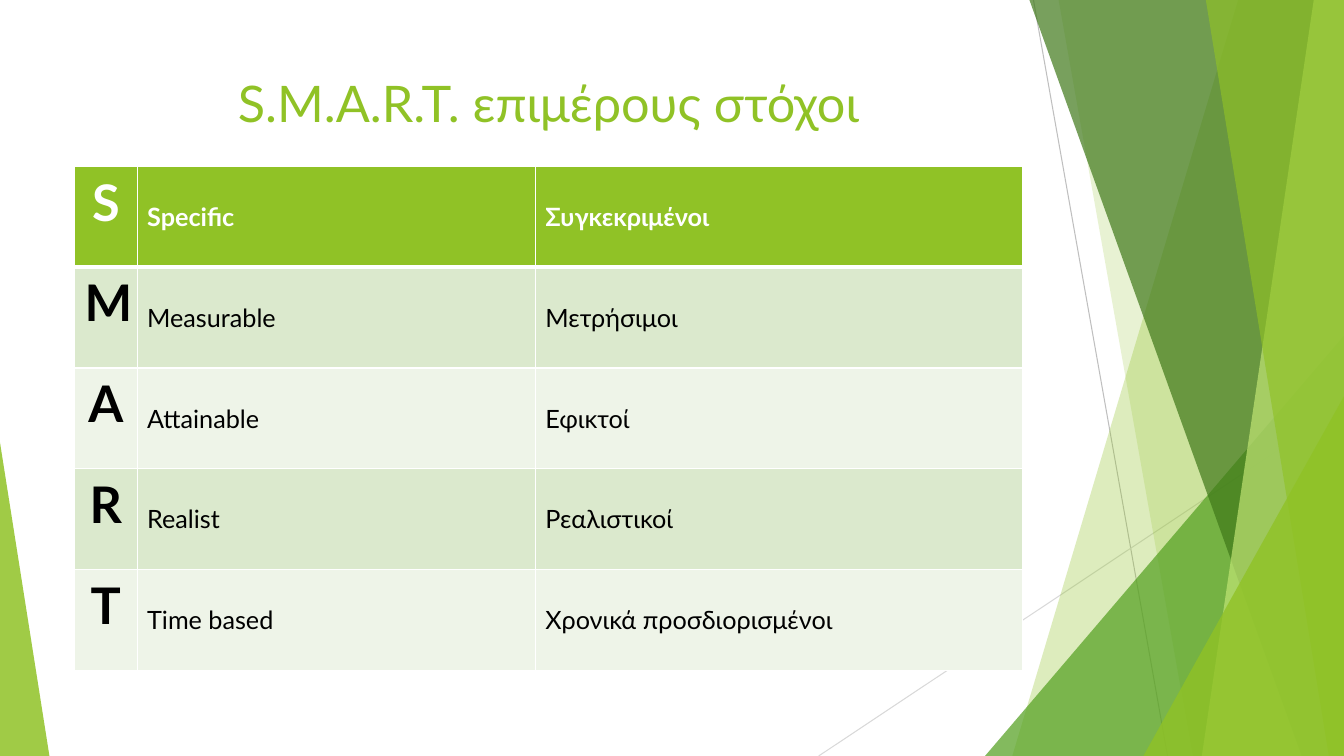
import pptx
import pptx.util
import pptx.dml.color
import pptx.enum.shapes
import pptx.enum.text
import pptx.oxml
import pptx.oxml.ns
from lxml import etree

Inches = pptx.util.Inches
Pt = pptx.util.Pt
ALIGN = pptx.enum.text.PP_ALIGN
ANCHOR = pptx.enum.text.MSO_ANCHOR
FONT = "Lato"
HUES = {
    "lime": "90C226", "leaf": "54A021", "moss": "3F7819", "pale": "C0E474",
    "grey": "BFBFBF", "mist": "D9D9D9", "white": "FFFFFF", "black": "000000",
    "band": "DBE9CD", "light": "EEF4E8",
}
GOALS = [
    ("S", "Specific", "Συγκεκριμένοι"),
    ("M", "Measurable", "Μετρήσιμοι"),
    ("A", "Attainable", "Εφικτοί"),
    ("R", "Realist", "Ρεαλιστικοί"),
    ("T", "Time based", "Χρονικά προσδιορισμένοι"),
]


def rgb(hue):
    return pptx.dml.color.RGBColor.from_string(HUES[hue])


def style(para, size, hue, bold=False):
    font = para.font
    font.name, font.size, font.bold = FONT, Pt(size), bold
    font.color.rgb = rgb(hue)


def paint(shape, hue, alpha):
    shape.shadow.inherit = False
    shape.line.fill.background()
    shape.fill.solid()
    shape.fill.fore_color.rgb = rgb(hue)
    tint = next(shape._element.spPr.iter(pptx.oxml.ns.qn("a:srgbClr")))
    etree.SubElement(tint, pptx.oxml.ns.qn("a:alpha"), val=str(alpha * 1000))


def facets(slide, left, top, width, height):
    """Draw the lines, slanted panels and corner triangles in the box."""
    right, base = left + width, top + height

    def rule(x1, y1, x2, y2, hue):
        line = slide.shapes.add_connector(
            pptx.enum.shapes.MSO_CONNECTOR.STRAIGHT,
            Inches(left + x1), Inches(top + y1), Inches(left + x2), Inches(top + y2))
        line.line.color.rgb = rgb(hue)
        line.line.width = Pt(0.75)
        etree.SubElement(line._element.spPr, pptx.oxml.ns.qn("a:effectLst"))

    def panel(high, low, hue, alpha):
        pen = slide.shapes.build_freeform(Inches(left + high), Inches(top), 1.0)
        spots = [(right, top), (right, base), (left + low, base)]
        pen.add_line_segments([(Inches(x), Inches(y)) for x, y in spots])
        paint(pen.convert_to_shape(), hue, alpha)

    def wedge(x, wide, tall, peak, hue, alpha):
        shape = slide.shapes.add_shape(
            pptx.enum.shapes.MSO_SHAPE.ISOSCELES_TRIANGLE,
            Inches(left + x), Inches(base - tall), Inches(wide), Inches(tall))
        shape.adjustments[0] = peak
        paint(shape, hue, alpha)

    rule(10.25, 0, 11.58, height, "grey")
    rule(width, 4.03, 8.12, height, "mist")
    panel(12.28, 10.04, "lime", 30)
    panel(10.5, 11.83, "lime", 20)
    wedge(width - 3.56, 3.56, 4.17, 1, "leaf", 72)
    panel(10.21, 12.91, "moss", 70)
    panel(13.03, 11.92, "pale", 70)
    panel(11.96, 13.18, "lime", 65)
    wedge(width - 1.99, 1.99, 3.57, 1, "lime", 80)
    wedge(0, 0.49, 3.11, 0, "lime", 85)


def title(slide, left, top, width, height):
    """Write the heading centred at the top of the box."""
    box = slide.shapes.add_textbox(*map(Inches, (left, top, width, height)))
    box.text_frame.word_wrap = True
    para = box.text_frame.paragraphs[0]
    para.text = "S.M.A.R.T. επιμέρους στόχοι"
    para.alignment = ALIGN.CENTER
    style(para, 36, "lime")


def edge(cell, row):
    """Give a cell white borders, thick below the header."""
    sizes = {"L": 1, "R": 1, "T": 3 if row == 1 else 1, "B": 3 if row == 0 else 1}
    props = cell._tc.get_or_add_tcPr()
    for spot, (side, size) in enumerate(sizes.items()):
        props.insert(spot, pptx.oxml.parse_xml(
            f'<a:ln{side} {pptx.oxml.ns.nsdecls("a")} w="{Pt(size)}"><a:solidFill>'
            f'<a:srgbClr val="{HUES["white"]}"/></a:solidFill></a:ln{side}>'))


def grid(slide, left, top, width, height):
    """Fill the box with the table of goals."""
    table = slide.shapes.add_table(
        len(GOALS), 3, *map(Inches, (left, top, width, height))).table
    for col, wide in zip(table.columns, (0.62, 3.95, width - 4.57)):
        col.width = Inches(wide)
    for r, goal in enumerate(GOALS):
        table.rows[r].height = Inches(height / len(GOALS))
        for c, text in enumerate(goal):
            cell = table.cell(r, c)
            cell.fill.solid()
            cell.fill.fore_color.rgb = rgb(
                "lime" if r == 0 else "band" if r % 2 else "light")
            edge(cell, r)
            cell.vertical_anchor = ANCHOR.MIDDLE if c else ANCHOR.TOP
            para = cell.text_frame.paragraphs[0]
            para.text = text
            para.alignment = ALIGN.LEFT if c else ALIGN.CENTER
            style(para, 18 if c else 36, "black" if r else "white", r == 0 or c == 0)


def main():
    deck = pptx.Presentation()
    deck.slide_width, deck.slide_height = Inches(13.33), Inches(7.5)
    slide = deck.slides.add_slide(deck.slide_layouts[6])
    facets(slide, 0, 0, 13.33, 7.5)
    title(slide, 0.74, 0.67, 9.4, 1.44)
    grid(slide, 0.74, 1.65, 9.4, 5)
    deck.save("out.pptx")


if __name__ == "__main__":
    main()
